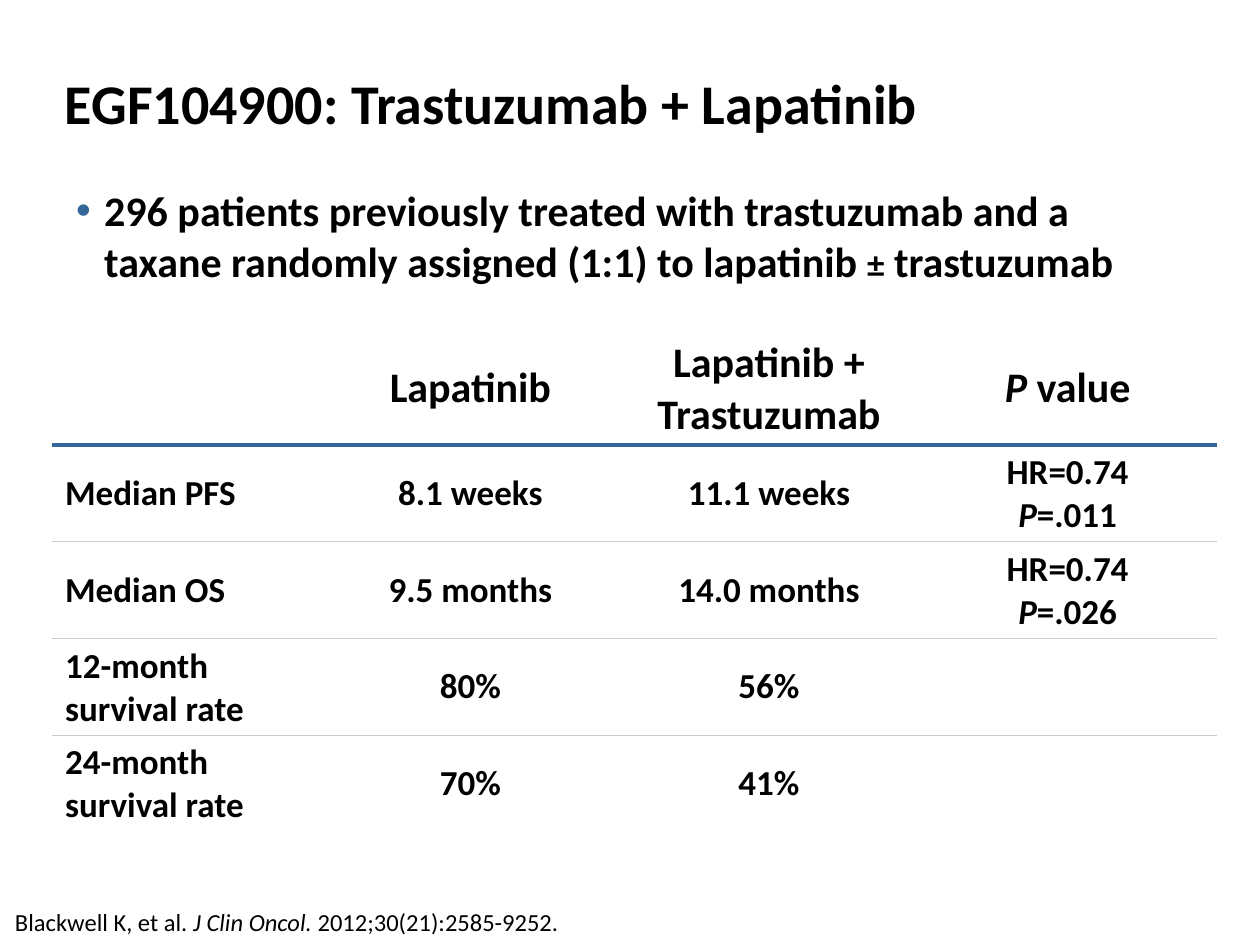
from lxml import etree
from pptx import Presentation
from pptx.dml.color import RGBColor
from pptx.enum.text import MSO_ANCHOR, PP_ALIGN
from pptx.oxml.ns import qn
from pptx.util import Pt

MIDDLE, TOP = MSO_ANCHOR.MIDDLE, MSO_ANCHOR.TOP
LEFT, CENTER = PP_ALIGN.LEFT, PP_ALIGN.CENTER
FONT = "Calibri"
COLORS = {"text": "000000", "accent": "336699", "rule": "CCCCCC"}
ITALIC = {"italic": True}

HEADER = ["", "Lapatinib", "Lapatinib + Trastuzumab", [("P ", ITALIC), "value"]]
RESULTS = [
    ["Median PFS", "8.1 weeks", "11.1 weeks", ["HR=0.74", "\n", ("P", ITALIC), "=.011"]],
    ["Median OS", "9.5 months", "14.0 months", ["HR=0.74", "\n", ("P", ITALIC), "=.026"]],
    ["12-month survival rate", "80%", "56%", ""],
    ["24-month survival rate", "70%", "41%", ""],
]


def write_text(frame, content, size, bold=True, align=LEFT):
    """Write a string or a list of runs; "\\n" starts a paragraph."""
    paragraph = frame.paragraphs[0]
    paragraph.alignment = align
    for part in [content] if isinstance(content, str) else content:
        words, changes = (part, {}) if isinstance(part, str) else part
        if words == "\n":
            paragraph = frame.add_paragraph()
            paragraph.alignment = align
            continue
        run = paragraph.add_run()
        run.text = words
        font = run.font
        font.name, font.bold = FONT, bold
        font.size = Pt(changes.get("size", size))
        font.italic = changes.get("italic", False)
        font.color.rgb = RGBColor.from_string(COLORS["text"])


def add_frame(slide, box, anchor=TOP, wrap=True):
    frame = slide.shapes.add_textbox(*map(Pt, box)).text_frame
    frame.word_wrap = wrap
    frame.vertical_anchor = anchor
    return frame


def add_bullet(paragraph, color):
    properties = paragraph._p.get_or_add_pPr()
    properties.set("marL", str(Pt(22.5)))
    properties.set("indent", str(-Pt(16)))
    bullet_color = etree.SubElement(properties, qn("a:buClr"))
    etree.SubElement(bullet_color, qn("a:srgbClr"), val=color)
    etree.SubElement(properties, qn("a:buFont"), typeface="Arial")
    etree.SubElement(properties, qn("a:buChar"), char="•")


def set_borders(cell, top, bottom):
    """Give each edge a (color, width) rule, or none."""
    properties = cell._tc.get_or_add_tcPr()
    for tag, rule in (("lnL", None), ("lnR", None), ("lnT", top), ("lnB", bottom)):
        line = etree.SubElement(properties, qn(f"a:{tag}"))
        if rule is None:
            etree.SubElement(line, qn("a:noFill"))
            continue
        color, width = rule
        line.set("w", str(Pt(width)))
        fill = etree.SubElement(line, qn("a:solidFill"))
        etree.SubElement(fill, qn("a:srgbClr"), val=COLORS[color])


def add_title(slide, box):
    write_text(add_frame(slide, box, MIDDLE), "EGF104900: Trastuzumab + Lapatinib", 32)


def add_summary(slide, box):
    frame = add_frame(slide, box)
    paragraph = frame.paragraphs[0]
    add_bullet(paragraph, COLORS["accent"])
    paragraph.space_after = Pt(6)
    write_text(frame, [
        "296 patients previously treated with trastuzumab and a taxane "
        "randomly assigned (1:1) to lapatinib ",
        ("±", {"size": 20}),
        " trastuzumab",
    ], 24)


def add_results(slide, box):
    left, top, width, height = box
    rows = [HEADER] + RESULTS
    table = slide.shapes.add_table(len(rows), len(HEADER), *map(Pt, box)).table
    table.first_row = table.horz_banding = False

    # First column holds labels; the others share the rest
    label_width, header_height = 153.5, 64.5
    for index, column in enumerate(table.columns):
        column.width = Pt((width - label_width) / 3 if index else label_width)
    for index, row in enumerate(table.rows):
        row.height = Pt((height - header_height) / len(RESULTS) if index else header_height)

    # Heavy rule under the header, thin rules between results
    rules = [None, ("accent", 2.25)] + [("rule", 0.75)] * (len(RESULTS) - 1) + [None]
    for r, values in enumerate(rows):
        for c, content in enumerate(values):
            cell = table.cell(r, c)
            set_borders(cell, rules[r], rules[r + 1])
            cell.fill.background()
            cell.vertical_anchor = MIDDLE
            if content:
                write_text(cell.text_frame, content, 20 if r else 24,
                           align=CENTER if c else LEFT)


def add_citation(slide, box):
    write_text(add_frame(slide, box, wrap=False), [
        "Blackwell K, et al. ", ("J Clin Oncol. ", ITALIC), "2012;30(21):2585-9252.",
    ], 14, bold=False)


def main():
    deck = Presentation()
    deck.slide_width, deck.slide_height = Pt(720), Pt(540)
    slide = deck.slides.add_slide(deck.slide_layouts[6])
    add_title(slide, (30, 21.5, 654, 74))
    add_citation(slide, (1.5, 515, 335.5, 24.5))
    add_results(slide, (30, 189.5, 665.5, 285.7))
    add_summary(slide, (30, 102, 654, 83.5))
    deck.save("out.pptx")


if __name__ == "__main__":
    main()
